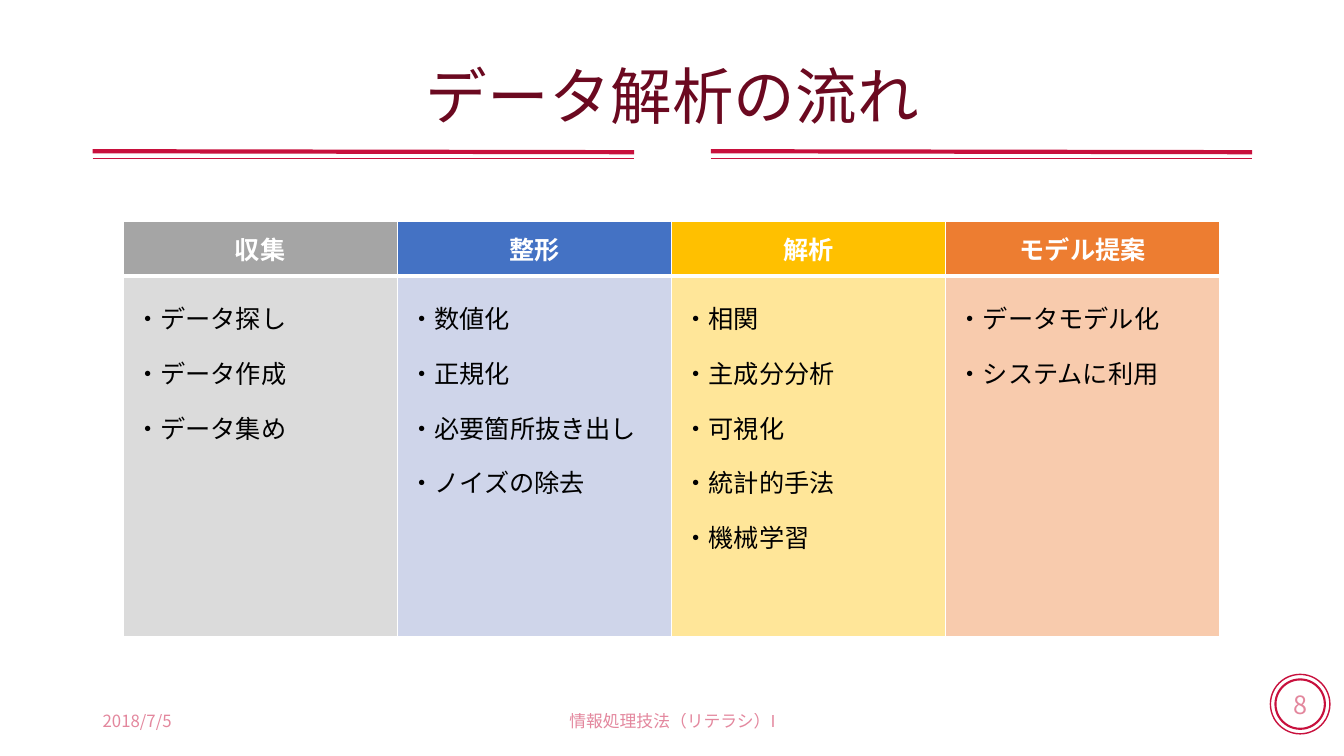
from lxml.etree import SubElement
from pptx import Presentation
from pptx.dml.color import RGBColor as Color
from pptx.enum.shapes import MSO_CONNECTOR as Connector, MSO_SHAPE as Shape
from pptx.enum.text import MSO_ANCHOR as Anchor, PP_ALIGN as Align
from pptx.oxml.ns import qn
from pptx.util import Inches, Pt

COLORS = {
    "accent": "C8103D", "title": "6B0920", "white": "FFFFFF", "black": "000000",
    "gray": "A5A5A5", "light gray": "DBDBDB", "blue": "4472C4", "light blue": "CFD5EA",
    "gold": "FFC000", "light gold": "FFE699", "orange": "ED7D31", "light orange": "F8CBAD",
}
STEPS = [
    ("収集", "gray", ["データ探し", "データ作成", "データ集め"]),
    ("整形", "blue", ["数値化", "正規化", "必要箇所抜き出し", "ノイズの除去"]),
    ("解析", "gold", ["相関", "主成分分析", "可視化", "統計的手法", "機械学習"]),
    ("モデル提案", "orange", ["データモデル化", "システムに利用"]),
]


class SlideBuilder:
    """Draws styled elements on one slide."""

    font_name = "Noto Sans CJK JP"

    def __init__(self, slide):
        self.slide = slide

    def color(self, name):
        return Color.from_string(COLORS[name])

    def fill_text(self, frame, lines, size, color, bold=False, alpha=None, **paragraph_format):
        for index, line in enumerate(lines):
            paragraph = frame.add_paragraph() if index else frame.paragraphs[0]
            for name, value in paragraph_format.items():
                setattr(paragraph, name, value)
            run = paragraph.add_run()
            run.text = line
            font_format = {"name": self.font_name, "size": Pt(size), "bold": bold}
            for name, value in font_format.items():
                setattr(run.font, name, value)
            run.font.color.rgb = self.color(color)
            properties = run._r.get_or_add_rPr()
            SubElement(properties, qn("a:ea"), typeface=self.font_name)
            if alpha:
                fill_color = properties.find(".//" + qn("a:srgbClr"))
                SubElement(fill_color, qn("a:alpha"), val=str(alpha * 1000))

    def text(self, box, line, size, color, **text_format):
        frame = self.slide.shapes.add_textbox(*map(Inches, box)).text_frame
        frame.word_wrap = True
        frame.vertical_anchor = Anchor.MIDDLE
        self.fill_text(frame, [line], size, color, **text_format)

    def circle(self, left, top, diameter, width):
        box = map(Inches, (left, top, diameter, diameter))
        shape = self.slide.shapes.add_shape(Shape.OVAL, *box)
        shape.shadow.inherit = False
        shape.fill.background()
        shape.line.color.rgb = self.color("accent")
        shape.line.width = Pt(width)
        return shape

    def page_number(self, number):
        self.circle(12.6, 6.69, 0.59, 1)
        frame = self.circle(12.65, 6.74, 0.49, 1.5).text_frame
        frame.word_wrap = False
        frame.vertical_anchor = Anchor.MIDDLE
        self.fill_text(frame, [number], 18, "accent", alpha=50, alignment=Align.CENTER)

    def line(self, start, end, width):
        points = map(Inches, (*start, *end))
        line = self.slide.shapes.add_connector(Connector.STRAIGHT, *points)
        line.line.color.rgb = self.color("accent")
        line.line.width = Pt(width)
        SubElement(line._element.spPr, qn("a:effectLst"))

    def cell(self, cell, fill, borders):
        margins = {"margin_left": 0.12, "margin_right": 0.12,
                   "margin_top": 0.05, "margin_bottom": 0.05}
        for name, value in margins.items():
            setattr(cell, name, Inches(value))
        properties = cell._tc.get_or_add_tcPr()
        for side, width in borders.items():
            border = SubElement(properties, qn("a:ln" + side), w=str(Pt(width)))
            border_fill = SubElement(border, qn("a:solidFill"))
            SubElement(border_fill, qn("a:srgbClr"), val=COLORS["white"])
        cell.fill.solid()
        cell.fill.fore_color.rgb = self.color(fill)

    def table(self, left, top, column_width, row_heights, steps):
        size = (column_width * len(steps), sum(row_heights))
        box = map(Inches, (left, top, *size))
        table = self.slide.shapes.add_table(len(row_heights), len(steps), *box).table
        for row, height in zip(table.rows, row_heights):
            row.height = Inches(height)
        for index, (heading, color, items) in enumerate(steps):
            table.columns[index].width = Inches(column_width)
            header, body = table.cell(0, index), table.cell(1, index)
            self.cell(header, color, {"L": 1, "R": 1, "T": 1, "B": 3})
            self.cell(body, f"light {color}", {"L": 1, "R": 1, "T": 3, "B": 1})
            header.vertical_anchor = Anchor.MIDDLE
            self.fill_text(header.text_frame, [heading], 18, "white", bold=True,
                           alignment=Align.CENTER)
            self.fill_text(body.text_frame, [f"・{item}" for item in items], 18, "black",
                           line_spacing=1.5)


def main():
    presentation = Presentation()
    presentation.slide_width = Inches(13.33)
    presentation.slide_height = Inches(7.5)
    builder = SlideBuilder(presentation.slides.add_slide(presentation.slide_layouts[6]))
    builder.page_number("8")
    for left in (7.05, 0.92):
        right = left + 5.37
        builder.line((left, 1.5), (right, 1.51), 3)
        builder.line((left, 1.57), (right, 1.57), 1)
    builder.text((0.92, 0.4, 11.5, 1.17), "データ解析の流れ", 44, "title",
                 alignment=Align.CENTER, line_spacing=0.9)
    builder.table(1.22, 2.2, 2.72, (0.54, 3.58), STEPS)
    builder.text((0.92, 6.95, 3, 0.4), "2018/7/5", 12, "accent", alpha=50)
    builder.text((4.42, 6.95, 4.5, 0.4), "情報処理技法（リテラシ）I", 12, "accent",
                 alpha=50, alignment=Align.CENTER)
    presentation.save("out.pptx")


if __name__ == "__main__":
    main()
